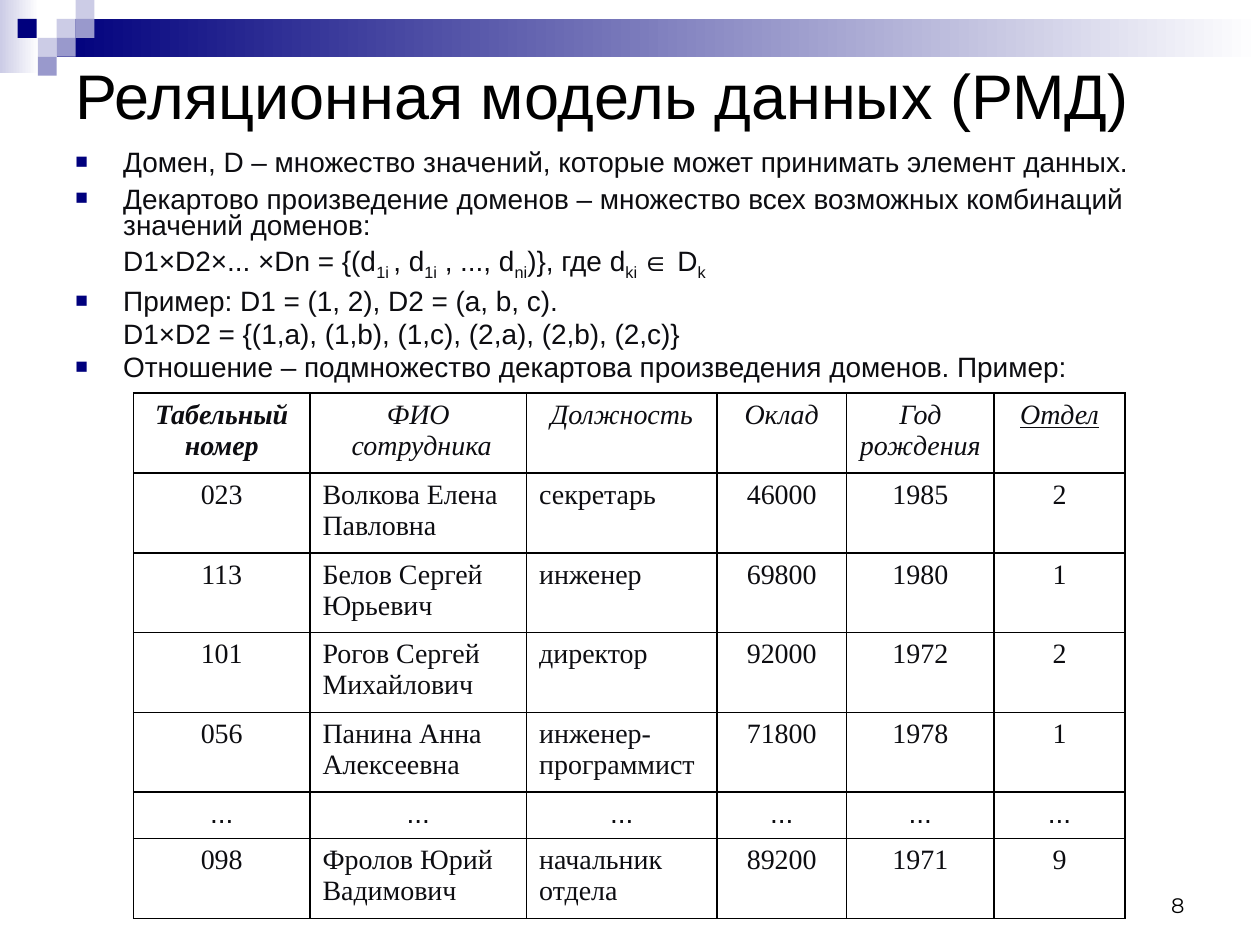
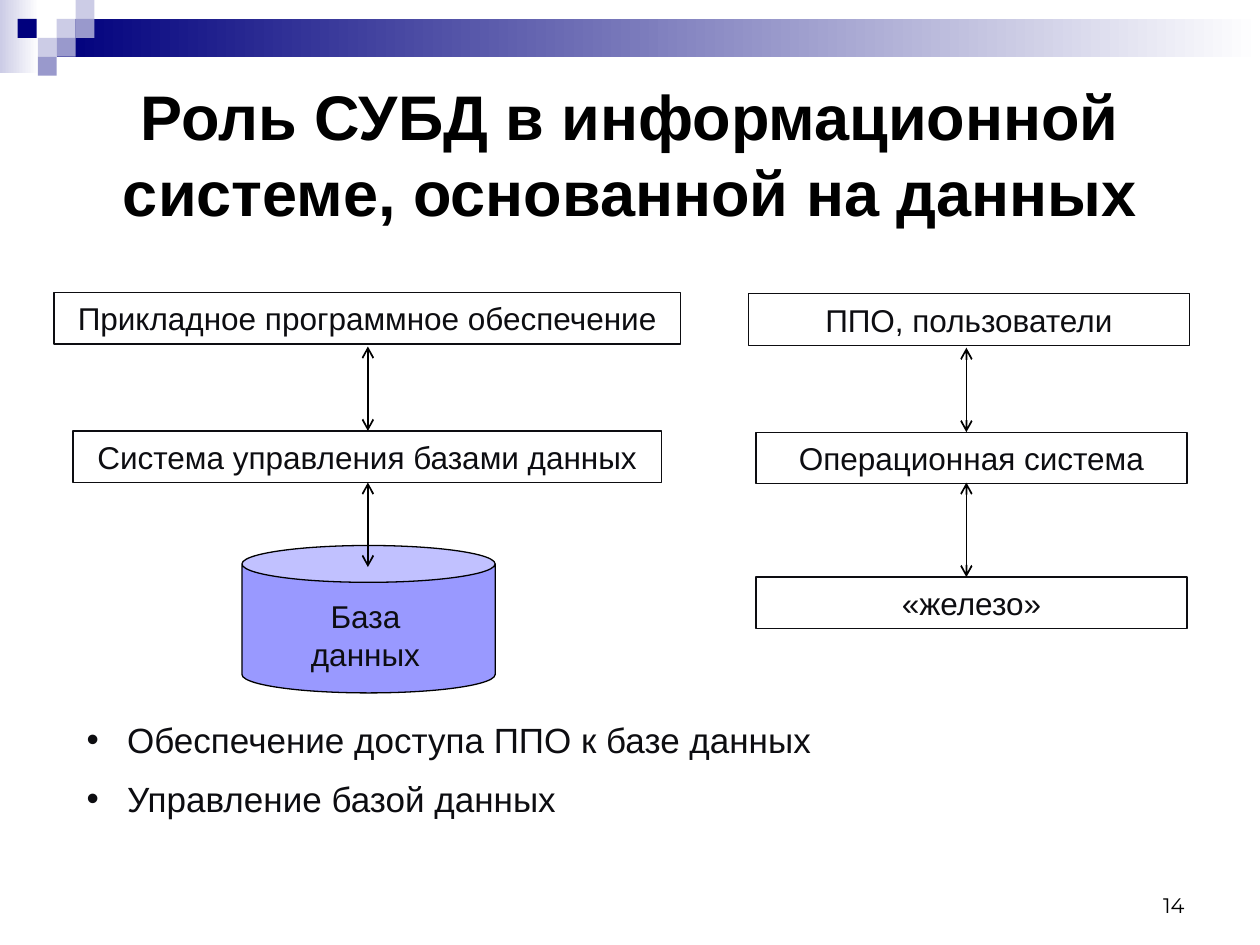
"""Build two slides on the relational data model and the role of a DBMS."""
from lxml import etree
from pptx import Presentation
from pptx.dml.color import RGBColor
from pptx.enum.shapes import MSO_CONNECTOR, MSO_SHAPE
from pptx.enum.text import MSO_ANCHOR, MSO_AUTO_SIZE, PP_ALIGN
from pptx.oxml.ns import qn
from pptx.util import Inches, Pt

RECT, CAN, STRAIGHT = MSO_SHAPE.RECTANGLE, MSO_SHAPE.CAN, MSO_CONNECTOR.STRAIGHT
LEFT, CENTER, RIGHT = PP_ALIGN.LEFT, PP_ALIGN.CENTER, PP_ALIGN.RIGHT
MIDDLE, BOTTOM = MSO_ANCHOR.MIDDLE, MSO_ANCHOR.BOTTOM
NO_FIT = MSO_AUTO_SIZE.NONE

BLACK = RGBColor(0x00, 0x00, 0x00)
WHITE = RGBColor(0xFF, 0xFF, 0xFF)
INK = RGBColor(0x0D, 0x0D, 0x11)
NAVY = RGBColor(0x00, 0x00, 0x7D)
LILAC = RGBColor(0x99, 0x99, 0xCC)
PALE = RGBColor(0xCC, 0xCC, 0xE6)
CAN_BLUE = RGBColor(0x99, 0x99, 0xFF)

BANDS = [(0, 0, 0.31, 0.58, PALE), (0.45, 0.15, 9.55, 0.3, NAVY)]
SQUARES = [(0.45, 0.15, PALE), (0.6, 0, PALE), (0.6, 0.15, LILAC), (0.3, 0.3, PALE),
           (0.14, 0.15, NAVY), (0.45, 0.3, LILAC), (0.3, 0.45, LILAC)]
TITLES = [
    ("Реляционная модель данных (РМД)", (0.5, 0.34, 9, 0.81), LEFT, False, "8"),
    ("Роль СУБД в информационной системе, основанной на данных",
     (0.75, 0.68, 8.5, 1.07), CENTER, True, "14"),
]


def style(p, size, font="Arial", color=INK, align=LEFT):
    """Format a paragraph and all of its runs."""
    p.alignment = align
    for r in p.runs:
        r.font.size, r.font.name, r.font.color.rgb = Pt(size), font, color


def indent(p, margin, bullet=None, color=INK, percent=100):
    """Indent a paragraph, with a hanging bullet if one is given."""
    pPr = p._p.get_or_add_pPr()
    pPr.set("marL", str(Inches(margin)))
    pPr.set("indent", str(-Inches(margin) if bullet else 0))
    if bullet:
        clr = etree.SubElement(pPr, qn("a:buClr"))
        etree.SubElement(clr, qn("a:srgbClr"), val=str(color))
        etree.SubElement(pPr, qn("a:buSzPct"), val=str(percent * 1000))
        etree.SubElement(pPr, qn("a:buFont"), typeface="Arial")
        etree.SubElement(pPr, qn("a:buChar"), char=bullet)


prs = Presentation()
prs.slide_width, prs.slide_height = Inches(10), Inches(7.5)

for title, box, align, bold, number in TITLES:
    s = prs.slides.add_slide(prs.slide_layouts[5])
    for x, y, w, h, color in BANDS + [(x, y, 0.15, 0.15, c) for x, y, c in SQUARES]:
        sp = s.shapes.add_shape(RECT, Inches(x), Inches(y), Inches(w), Inches(h))
        sp.shadow.inherit = False
        sp.line.fill.background()
        if w > 0.15:
            sp.fill.gradient()
            sp.fill.gradient_angle = 0
            for stop, stop_color in zip(sp.fill.gradient_stops, (color, WHITE)):
                stop.color.rgb = stop_color
        else:
            sp.fill.solid()
            sp.fill.fore_color.rgb = color

    sp = s.shapes.title
    sp.left, sp.top, sp.width, sp.height = map(Inches, box)
    tf = sp.text_frame
    tf.text = title
    tf.auto_size, tf.vertical_anchor = NO_FIT, MIDDLE
    style(tf.paragraphs[0], 36, color=BLACK, align=align)
    tf.paragraphs[0].runs[0].font.bold = bold

    tf = s.shapes.add_textbox(Inches(7.17), Inches(6.83), Inches(2.33), Inches(0.5)).text_frame
    tf.text = number
    tf.word_wrap, tf.vertical_anchor = True, BOTTOM
    style(tf.paragraphs[0], 12, "Montserrat", BLACK, RIGHT)

model, role = prs.slides

DEFINITIONS = [
    ("Домен, D – множество значений, которые может принимать элемент данных.", True, 5.5, 0),
    ("Декартово произведение доменов – множество всех возможных комбинаций "
     "значений доменов:", True, 5.5, 0),
    ("D1×D2×... ×Dn = {(d|1i |, d|1i| , ..., d|ni|)}, где d|ki |∈ D|k", False, 3.5, 3.5),
    ("Пример: D1 = (1, 2), D2 = (a, b, c).", True, 3.5, 0),
    ("D1×D2 = {(1,a), (1,b), (1,c), (2,a), (2,b), (2,c)}", False, 3.5, 0),
    ("Отношение – подмножество декартова произведения доменов. Пример:", True, 3.5, 0),
]
tf = model.shapes.add_textbox(Inches(0.5), Inches(1.15), Inches(9), Inches(1.97)).text_frame
tf.word_wrap = True
for i, (text, bulleted, before, after) in enumerate(DEFINITIONS):
    p = tf.add_paragraph() if i else tf.paragraphs[0]
    for j, part in enumerate(text.split("|")):
        r = p.add_run()
        r.text = part
        if j % 2:
            r._r.get_or_add_rPr().set("baseline", "-25000")
    style(p, 16)
    p.line_spacing, p.space_before, p.space_after = 0.8, Pt(before), Pt(after)
    indent(p, 0.38, "■" if bulleted else None, NAVY, 75)

COLUMNS = [1.4, 1.72, 1.51, 1.03, 1.17, 1.04]
EMPLOYEES = [
    ["Табельный номер", "ФИО\v сотрудника", "Должность", "Оклад", "Год\vрождения", "Отдел"],
    ["023", "Волкова Елена Павловна", "секретарь", "46000", "1985", "2"],
    ["113", "Белов Сергей Юрьевич", "инженер", "69800", "1980", "1"],
    ["101", "Рогов Сергей Михайлович", "директор", "92000", "1972", "2"],
    ["056", "Панина Анна Алексеевна", "инженер-программист", "71800", "1978", "1"],
    ["..."] * 6,
    ["098", "Фролов Юрий Вадимович", "начальник отдела", "89200", "1971", "9"],
]
table = model.shapes.add_table(len(EMPLOYEES), len(COLUMNS), Inches(1.06), Inches(3.12),
                               Inches(sum(COLUMNS)), Inches(3.9)).table
table.first_row = table.horz_banding = False
for col, width in zip(table.columns, COLUMNS):
    col.width = Inches(width)
for i, values in enumerate(EMPLOYEES):
    dots = values[0] == "..."
    table.rows[i].height = Inches(0.35 if dots else 0.59)
    for j, value in enumerate(values):
        cell = table.cell(i, j)
        p = cell.text_frame.paragraphs[0]
        p.text = value
        style(p, 16, "Arial" if dots else "Times New Roman",
              align=LEFT if i and not dots and j in (1, 2) else CENTER)
        for r in p.runs:
            r.font.italic = i == 0
            r.font.bold = i == j == 0
            r.font.underline = i == 0 and value == "Отдел"
        tcPr = cell._tc.get_or_add_tcPr()
        for side in ("a:lnL", "a:lnR", "a:lnT", "a:lnB"):
            ln = etree.SubElement(tcPr, qn(side), w=str(Pt(1)))
            fill = etree.SubElement(ln, qn("a:solidFill"))
            etree.SubElement(fill, qn("a:srgbClr"), val=str(BLACK))
        cell.fill.background()

LAYERS = [
    ("Прикладное программное обеспечение", 0.43, 2.32, 4.97),
    ("Система управления базами данных", 0.58, 3.42, 4.67),
    ("ППО, пользователи", 5.94, 2.33, 3.5),
    ("Операционная система", 6, 3.43, 3.42),
    ("«железо»", 6, 4.58, 3.42),
]
for text, x, y, w in LAYERS:
    sp = role.shapes.add_shape(RECT, Inches(x), Inches(y), Inches(w), Inches(0.41))
    sp.shadow.inherit = False
    sp.fill.background()
    sp.line.color.rgb, sp.line.width = INK, Pt(0.75)
    sp.text_frame.text = text
    style(sp.text_frame.paragraphs[0], 18, align=CENTER)

sp = role.shapes.add_shape(CAN, Inches(1.92), Inches(4.33), Inches(2.01), Inches(1.17))
sp.shadow.inherit = False
sp.fill.solid()
sp.fill.fore_color.rgb = CAN_BLUE
sp.line.color.rgb, sp.line.width = BLACK, Pt(0.75)
tf = role.shapes.add_textbox(Inches(2.09), Inches(4.69), Inches(1.62), Inches(0.4)).text_frame
tf.word_wrap = True
tf.text = "База данных"
style(tf.paragraphs[0], 18, align=CENTER)

ARROWS = [(2.92, 2.75, 3.42), (2.92, 3.83, 4.5), (7.67, 2.76, 3.43), (7.67, 3.83, 4.58)]
for x, top, bottom in ARROWS:
    cn = role.shapes.add_connector(STRAIGHT, Inches(x), Inches(top), Inches(x), Inches(bottom))
    cn.line.color.rgb, cn.line.width = BLACK, Pt(1)
    ln = cn.line._get_or_add_ln()
    for end in ("a:headEnd", "a:tailEnd"):
        etree.SubElement(ln, qn(end), type="arrow")
    etree.SubElement(cn._element.spPr, qn("a:effectLst"))

tf = role.shapes.add_textbox(Inches(0.59), Inches(5.65), Inches(8.33), Inches(0.93)).text_frame
tf.word_wrap = True
tf.text = "Обеспечение доступа ППО к базе данных\nУправление базой данных"
for p in tf.paragraphs:
    style(p, 20)
    indent(p, 0.32, "•")
tf.paragraphs[1].space_before = Pt(10)

prs.save("out.pptx")
